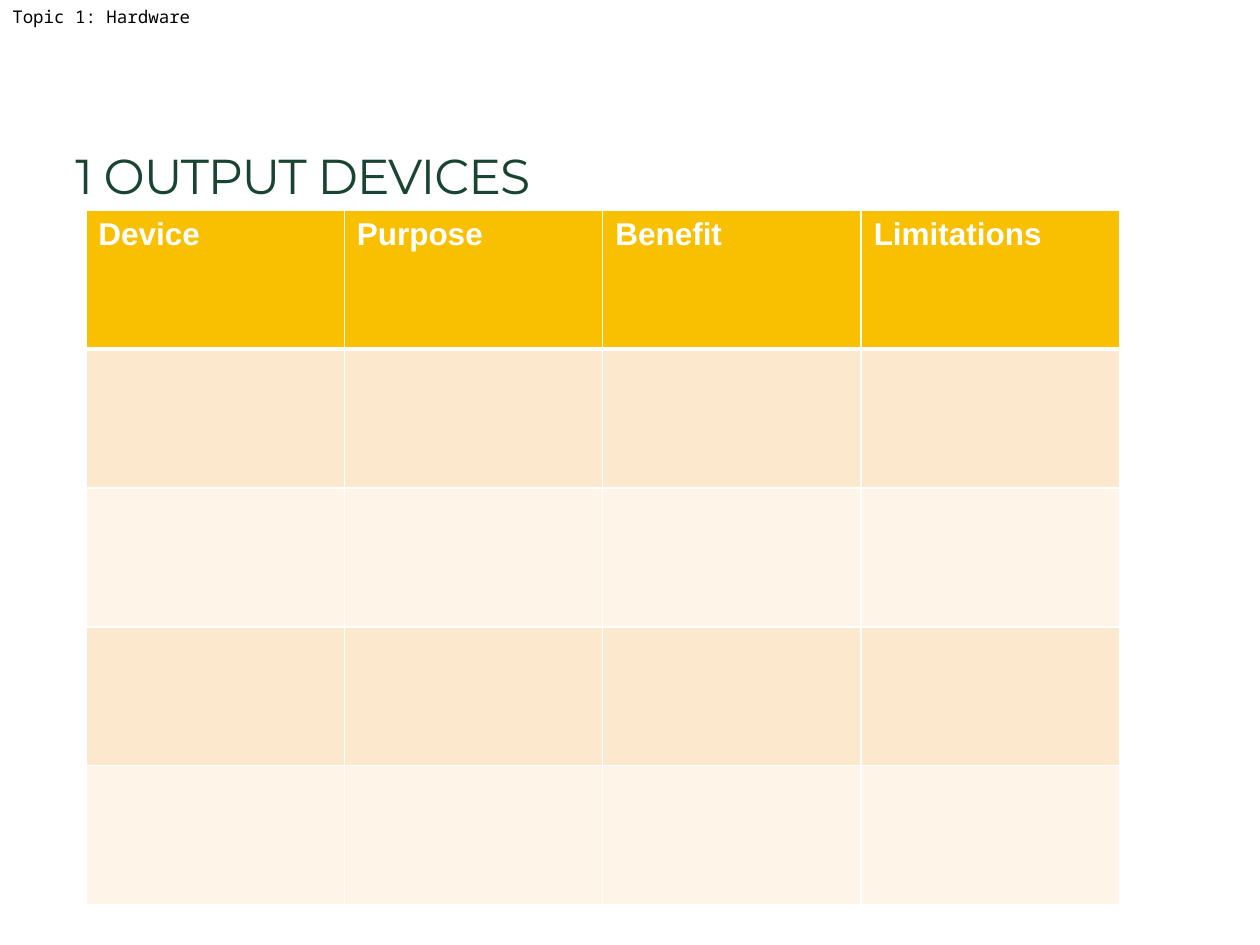
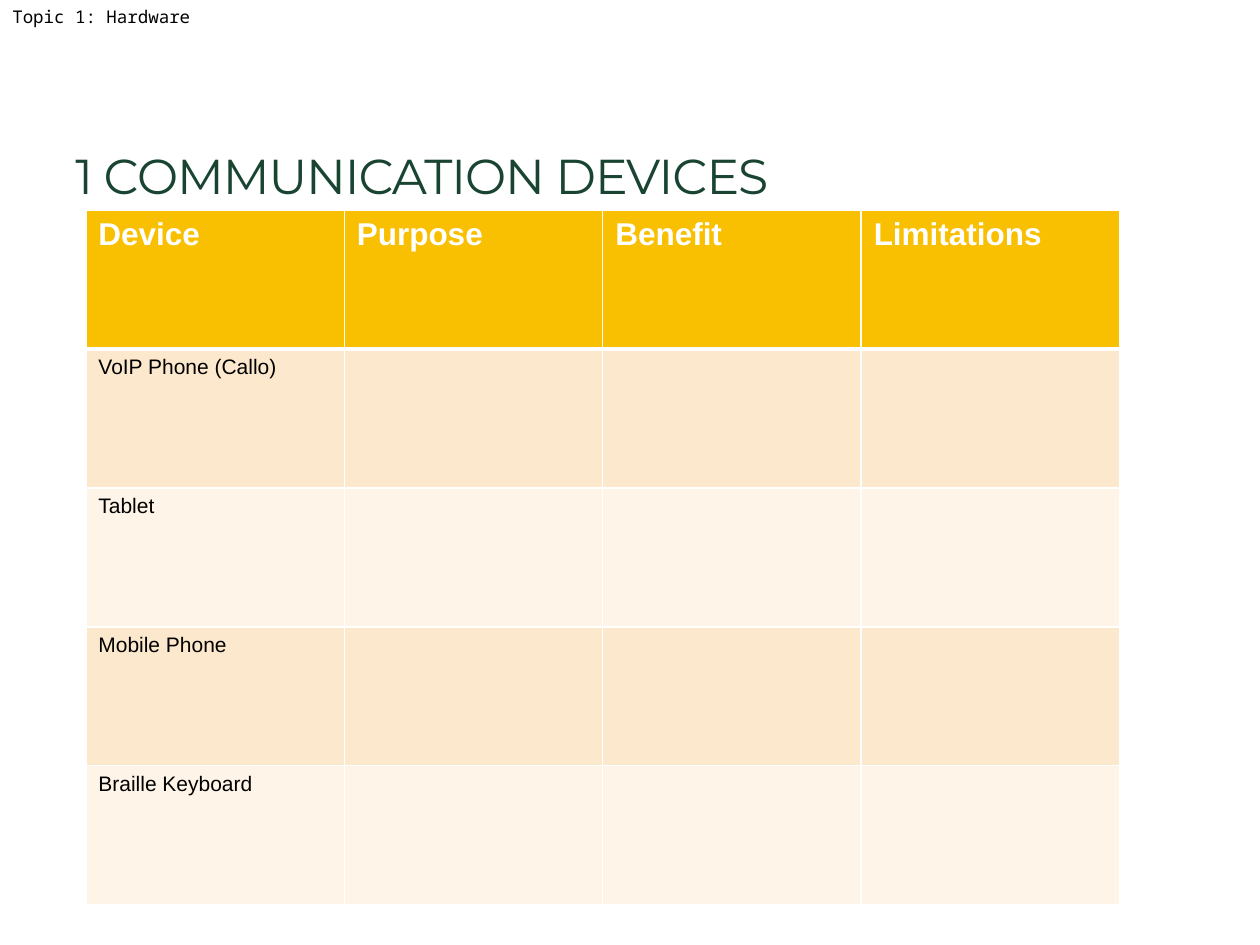
import pptx
import pptx.dml.color
import pptx.enum.text
import pptx.oxml.ns
import pptx.util
from lxml import etree
from pptx.util import Cm

# Shared look
BLACK, WHITE = "000000", "FFFFFF"
TITLE_GREEN = "194431"
HEADER_GOLD = "F8C000"
BAND_FILLS = ("FCE8CC", "FEF4E7")
TOPIC = "Topic 1: Hardware"
HEADINGS = ("Device", "Purpose", "Benefit", "Limitations")
COLUMN_WIDTH, ROW_HEIGHT = Cm(5.21), Cm(2.8)
BODY_ROWS = 4

# Title and listed devices of each slide
SLIDES = (
    ("1 OUTPUT DEVICES", ()),
    ("1 COMMUNICATION DEVICES",
     ("VoIP Phone (Callo)", "Tablet", "Mobile Phone", "Braille Keyboard")),
)


def colour(value):
    return pptx.dml.color.RGBColor.from_string(value)


def add_run(para, text, font, size, hue, bold=False, spacing=None):
    span = para.add_run()
    span.text = text
    span.font.name = font
    span.font.size = pptx.util.Pt(size)
    span.font.bold = bold
    span.font.color.rgb = colour(hue)
    if spacing is not None:
        span.font._element.set("spc", str(round(spacing * 100)))


def add_topic(page):
    box = page.shapes.add_textbox(0, 0, Cm(4.14), Cm(0.68))
    box.text_frame.word_wrap = False
    box.text_frame.auto_size = pptx.enum.text.MSO_AUTO_SIZE.SHAPE_TO_FIT_TEXT
    add_run(box.text_frame.paragraphs[0], TOPIC, "Noto Sans Mono", 10, BLACK)


def add_title(page, text):
    box = page.shapes.add_textbox(Cm(1.27), Cm(0.84), Cm(16.08), Cm(3.4))
    box.text_frame.word_wrap = True
    box.text_frame.vertical_anchor = pptx.enum.text.MSO_ANCHOR.BOTTOM
    add_run(box.text_frame.paragraphs[0], text, "Montserrat", 28, TITLE_GREEN,
            spacing=-0.6)


def set_borders(cell, top, bottom):
    properties = cell._tc.get_or_add_tcPr()
    qn = pptx.oxml.ns.qn
    for side, points in (("L", 1), ("R", 1), ("T", top), ("B", bottom)):
        line = etree.SubElement(properties, qn(f"a:ln{side}"),
                                w=str(pptx.util.Pt(points)))
        fill = etree.SubElement(line, qn("a:solidFill"))
        etree.SubElement(fill, qn("a:srgbClr"), val=WHITE)


def style_cell(cell, row):
    # A thick rule separates the header from the banded body
    set_borders(cell, top=3 if row == 1 else 1, bottom=3 if row == 0 else 1)
    cell.fill.solid()
    band = HEADER_GOLD if row == 0 else BAND_FILLS[(row - 1) % 2]
    cell.fill.fore_color.rgb = colour(band)


def add_device_table(page, devices):
    rows, columns = BODY_ROWS + 1, len(HEADINGS)
    table = page.shapes.add_table(
        rows, columns, Cm(1.73), Cm(4.24),
        COLUMN_WIDTH * columns, ROW_HEIGHT * rows).table
    for column in table.columns:
        column.width = COLUMN_WIDTH
    for index, row in enumerate(table.rows):
        row.height = ROW_HEIGHT
        for cell in row.cells:
            style_cell(cell, index)
    for index, heading in enumerate(HEADINGS):
        para = table.cell(0, index).text_frame.paragraphs[0]
        add_run(para, heading, "Arial", 18, WHITE, bold=True)
    for index, device in enumerate(devices, start=1):
        para = table.cell(index, 0).text_frame.paragraphs[0]
        add_run(para, device, "Arial", 12, BLACK)


def main():
    deck = pptx.Presentation()
    deck.slide_width, deck.slide_height = Cm(25.4), Cm(19.05)
    for title, devices in SLIDES:
        page = deck.slides.add_slide(deck.slide_layouts[6])
        add_topic(page)
        add_title(page, title)
        add_device_table(page, devices)
    deck.save("out.pptx")


if __name__ == "__main__":
    main()
